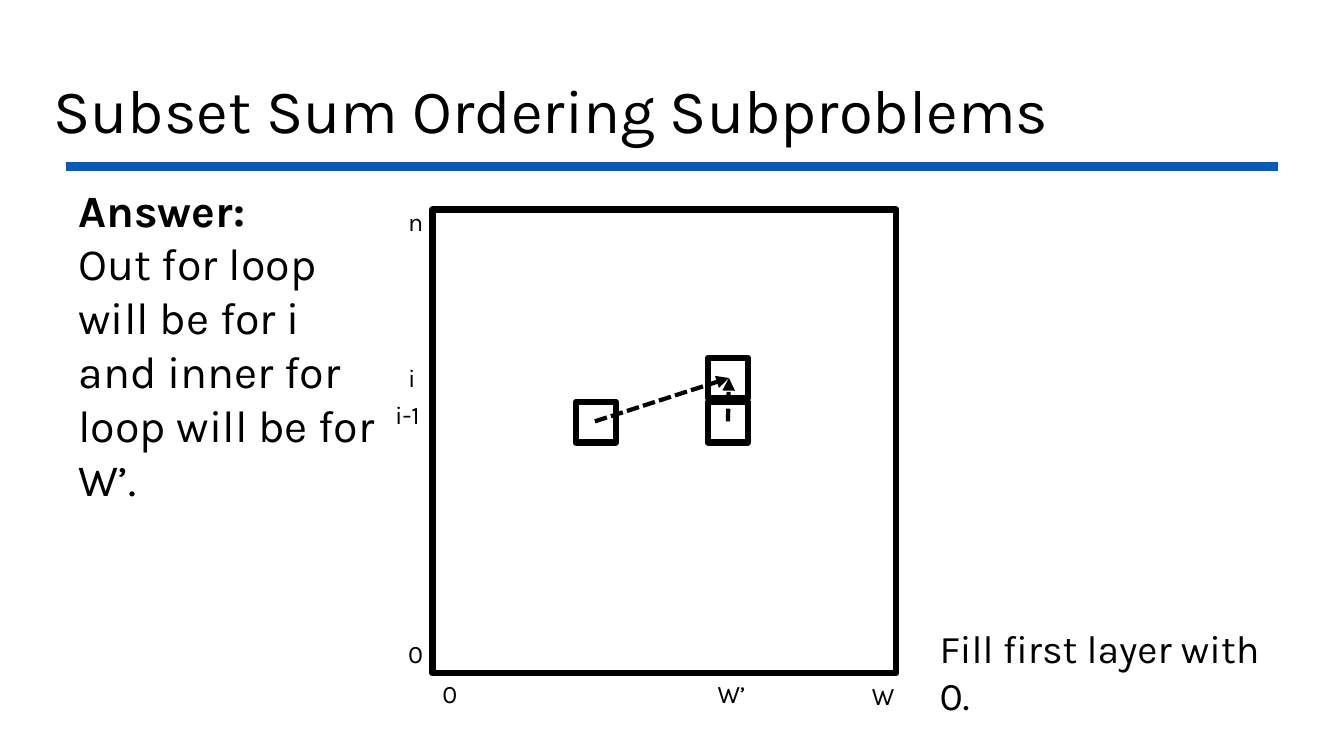
import pptx
import pptx.util
from lxml import etree
from pptx.dml.color import RGBColor
from pptx.enum.dml import MSO_LINE
from pptx.enum.shapes import MSO_CONNECTOR, MSO_SHAPE
from pptx.enum.text import MSO_ANCHOR, PP_ALIGN
from pptx.oxml.ns import qn
from pptx.util import Inches, Pt

BLACK = RGBColor(0x00, 0x00, 0x00)
BLUE = RGBColor(0x00, 0x5B, 0xBC)
FONT = "Karla"

TITLE = "Subset Sum Ordering Subproblems"
ANSWER = ["Answer:", "Out for loop will be for i and inner for loop will be for W’."]
NOTE = ["Fill first layer with 0."]
AXIS_LABELS = [
    ("n", 3.95, 2.0, 0.34),
    ("i", 3.95, 3.55, 0.26),
    ("i-1", 3.82, 3.91, 0.46),
    ("0", 3.95, 6.28, 0.34),
    ("0", 4.29, 6.68, 0.34),
    ("W’", 7.02, 6.68, 0.5),
    ("W", 8.55, 6.7, 0.43),
]
TABLE_SQUARE = (4.29, 2.08, 4.6)
CELL = 0.4
CELLS = [(7.02, 3.55), (7.02, 3.99), (5.71, 3.99)]
TARGET = (7.23, 3.75)
ARROW_STARTS = [(5.9, 4.18), (7.22, 4.18)]


def style(p, size, bold=False):
    """Set the font of a paragraph."""
    p.font.name = FONT
    p.font.size = Pt(size)
    p.font.bold = bold
    p.font.color.rgb = BLACK


def add_text(s, lines, left, top, width, height, size, wrap=True):
    """Add a text box with one paragraph per line."""
    box = s.shapes.add_textbox(*map(Inches, (left, top, width, height)))
    tf = box.text_frame
    tf.word_wrap = wrap
    tf.text = "\n".join(lines)
    for p in tf.paragraphs:
        style(p, size)
    return tf


def add_square(s, left, top, side):
    """Add an unfilled black square."""
    sp = s.shapes.add_shape(MSO_SHAPE.RECTANGLE, *map(Inches, (left, top, side, side)))
    sp.shadow.inherit = False
    sp.fill.background()
    sp.line.color.rgb = BLACK
    sp.line.width = Pt(4.5)


def add_line(s, start, end, color, width):
    """Add a straight line without a shadow."""
    line = s.shapes.add_connector(MSO_CONNECTOR.STRAIGHT, *map(Inches, start + end))
    line.line.color.rgb = color
    line.line.width = Pt(width)
    etree.SubElement(line._element.spPr, qn("a:effectLst"))
    return line


def add_arrow(s, start, end):
    """Add a dashed arrow."""
    arrow = add_line(s, start, end, BLACK, 3)
    arrow.line.dash_style = MSO_LINE.SQUARE_DOT
    etree.SubElement(arrow.line._get_or_add_ln(), qn("a:tailEnd"), type="triangle")


def main():
    """Build the slide."""
    prs = pptx.Presentation()
    prs.slide_width, prs.slide_height = Inches(13.33), Inches(7.5)
    s = prs.slides.add_slide(prs.slide_layouts[5])

    title = s.shapes.title
    title.left, title.top, title.width, title.height = map(Inches, (0.43, 0.4, 12.71, 1.45))
    tf = title.text_frame
    tf.text = TITLE
    tf.vertical_anchor = MSO_ANCHOR.MIDDLE
    p = tf.paragraphs[0]
    p.alignment = PP_ALIGN.LEFT
    p.line_spacing = 0.9
    style(p, 44)

    add_line(s, (0.65, 1.65), (12.68, 1.65), BLUE, 6)
    answer = add_text(s, ANSWER, 0.68, 1.76, 3.27, 2.79, 32)
    answer.paragraphs[0].font.bold = True

    add_square(s, *TABLE_SQUARE)
    for label, left, top, width in AXIS_LABELS:
        add_text(s, [label], left, top, width, 0.4, 18, wrap=False)
    for left, top in CELLS:
        add_square(s, left, top, CELL)
    for start in ARROW_STARTS:
        add_arrow(s, start, TARGET)

    add_text(s, NOTE, 9.22, 6.14, 3.53, 0.57, 28)
    prs.save("out.pptx")


if __name__ == "__main__":
    main()
